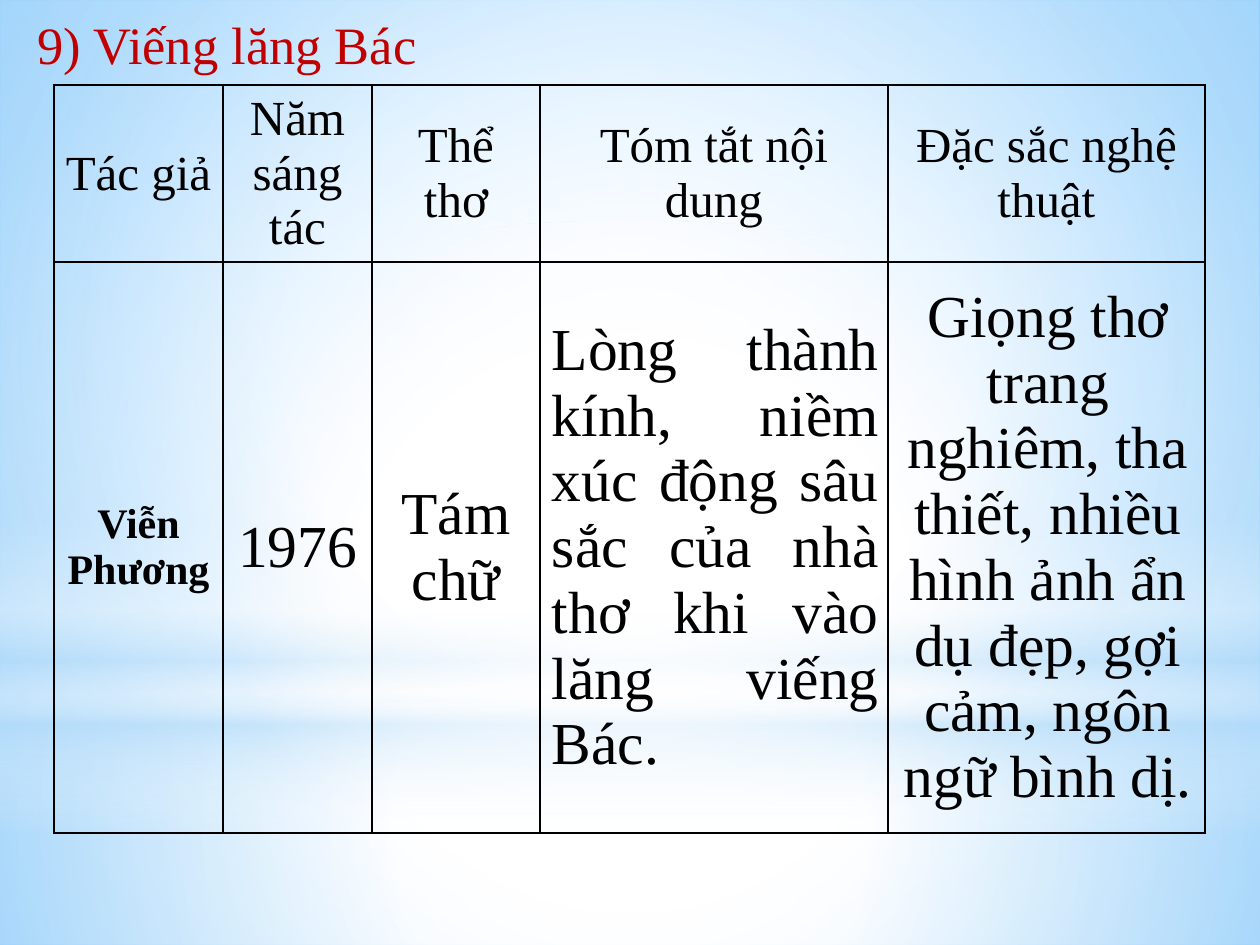
from lxml import etree
from pptx import Presentation
from pptx.dml.color import RGBColor
from pptx.enum.shapes import MSO_SHAPE
from pptx.enum.text import MSO_ANCHOR, MSO_AUTO_SIZE, PP_ALIGN
from pptx.oxml.ns import qn
from pptx.util import Emu, Pt

# Content
TITLE = "9) Viếng lăng Bác"
HEADER = ["Tác giả", "Năm sáng tác", "Thể thơ", "Tóm tắt nội dung", "Đặc sắc nghệ thuật"]
POEM = [
    "Viễn Phương",
    "1976",
    "Tám chữ",
    "Lòng thành kính, niềm xúc động sâu sắc của nhà thơ khi vào lăng viếng Bác.",
    "Giọng thơ trang nghiêm, tha thiết, nhiều hình ảnh ẩn dụ đẹp, gợi cảm, ngôn ngữ bình dị.",
]
COL_WIDTHS = [169, 149, 168, 348, 317]
ROW_HEIGHTS = [177, 571]
AUTHOR_COL, SUMMARY_COL = 0, 3

FONT = "Times New Roman"
RED = RGBColor(0xC0, 0x00, 0x00)
BLACK = RGBColor(0x00, 0x00, 0x00)
WHITE = RGBColor(0xFF, 0xFF, 0xFF)
SKY = RGBColor(0x63, 0xBC, 0xFF)
PALE = RGBColor(0xB4, 0xDC, 0xFA)

# Gradients: stops are (position %, colour, opacity %);
# a radial one has a focus rectangle (left, top, right, bottom in %)
CENTRE = (50, 50, 50, 50)
BACKGROUND = ([(0, WHITE, 100), (36, WHITE, 100), (100, SKY, 100)], (24, 44, 24, 12))
GLOWS = [  # shape, (left, top, width, height), stops, focus
    (MSO_SHAPE.RECTANGLE, (0, 703, 1260, 242),
     [(0, WHITE, 91), (37, WHITE, 76), (100, PALE, 79)], CENTRE),
    (MSO_SHAPE.RECTANGLE, (0, 0, 1260, 703),
     [(0, WHITE, 89), (48, WHITE, 62), (100, PALE, 79)], CENTRE),
    (MSO_SHAPE.RECTANGLE, (0, 519, 1260, 315),
     [(0, WHITE, 0), (29, WHITE, 30), (45, PALE, 40),
      (55, WHITE, 26), (65, PALE, 60), (100, WHITE, 0)], None),
    (MSO_SHAPE.OVAL, (0, 221, 1260, 703), [(0, WHITE, 100), (56, WHITE, 0)], CENTRE),
]


def px(n):
    return Emu(round(n * 914400 / 126))


def set_gradient(props, stops, focus):
    """Replace the solid fill in props by a gradient; no focus means top to bottom."""
    grad = etree.Element(qn("a:gradFill"), rotWithShape="1")
    gs_list = etree.SubElement(grad, qn("a:gsLst"))
    for pos, color, opacity in stops:
        gs = etree.SubElement(gs_list, qn("a:gs"), pos=str(pos * 1000))
        clr = etree.SubElement(gs, qn("a:srgbClr"), val=str(color))
        etree.SubElement(clr, qn("a:alpha"), val=str(opacity * 1000))
    if focus:
        kind = etree.SubElement(grad, qn("a:path"), {"path": "circle"})
        sides = {side: str(v * 1000) for side, v in zip("ltrb", focus)}
        etree.SubElement(kind, qn("a:fillToRect"), sides)
    else:
        etree.SubElement(grad, qn("a:lin"), ang="5400000", scaled="0")
    props.replace(props.find(qn("a:solidFill")), grad)


def set_borders(cell):
    tc_pr = cell._tc.get_or_add_tcPr()
    for side in ("lnL", "lnR", "lnT", "lnB"):
        ln = etree.SubElement(tc_pr, qn(f"a:{side}"), w=str(Pt(1)))
        fill = etree.SubElement(ln, qn("a:solidFill"))
        etree.SubElement(fill, qn("a:srgbClr"), val=str(BLACK))


def style(p, size, color, align, bold=False):
    p.alignment = align
    p.font.name, p.font.size, p.font.bold = FONT, Pt(size), bold
    p.font.color.rgb = color


prs = Presentation()
prs.slide_width, prs.slide_height = px(1260), px(945)
slide = prs.slides.add_slide(prs.slide_layouts[5])

# Background and its layers of light
slide.background.fill.solid()
set_gradient(slide.element.find(".//" + qn("p:bgPr")), *BACKGROUND)
for kind, box, stops, focus in GLOWS:
    sp = slide.shapes.add_shape(kind, *map(px, box))
    sp.shadow.inherit = False
    sp.line.fill.background()
    sp.fill.solid()
    set_gradient(sp.element.spPr, stops, focus)

# Title, brought in front of the layers
title = slide.shapes.title
slide.shapes._spTree.append(title.element)
title.left, title.top, title.width, title.height = map(px, (25, 6, 423, 77))
tf = title.text_frame
tf.text = TITLE
tf.word_wrap = False
tf.auto_size = MSO_AUTO_SIZE.NONE
tf.vertical_anchor = MSO_ANCHOR.TOP
style(tf.paragraphs[0], 30, RED, PP_ALIGN.LEFT)

# Table
frame = slide.shapes.add_table(2, len(HEADER), px(54), px(85),
                               px(sum(COL_WIDTHS)), px(sum(ROW_HEIGHTS)))
table = frame.table
table.first_row = table.horz_banding = False
for col, width in zip(table.columns, COL_WIDTHS):
    col.width = px(width)
for row, height in zip(table.rows, ROW_HEIGHTS):
    row.height = px(height)

for r, texts in enumerate([HEADER, POEM]):
    for c, text in enumerate(texts):
        cell = table.cell(r, c)
        cell.text = text
        cell.vertical_anchor = MSO_ANCHOR.MIDDLE
        cell.margin_left = cell.margin_right = px(9)
        cell.margin_top = cell.margin_bottom = 0
        set_borders(cell)
        cell.fill.background()
        p = cell.text_frame.paragraphs[0]
        author = r == 1 and c == AUTHOR_COL
        size = 28 if r == 0 else 24 if author else 34
        justified = r == 1 and c == SUMMARY_COL
        style(p, size, BLACK, PP_ALIGN.JUSTIFY if justified else PP_ALIGN.CENTER, author)
        if r == 1 and c >= SUMMARY_COL:
            p._p.get_or_add_pPr().set("marL", str(px(3)))

prs.save("out.pptx")
